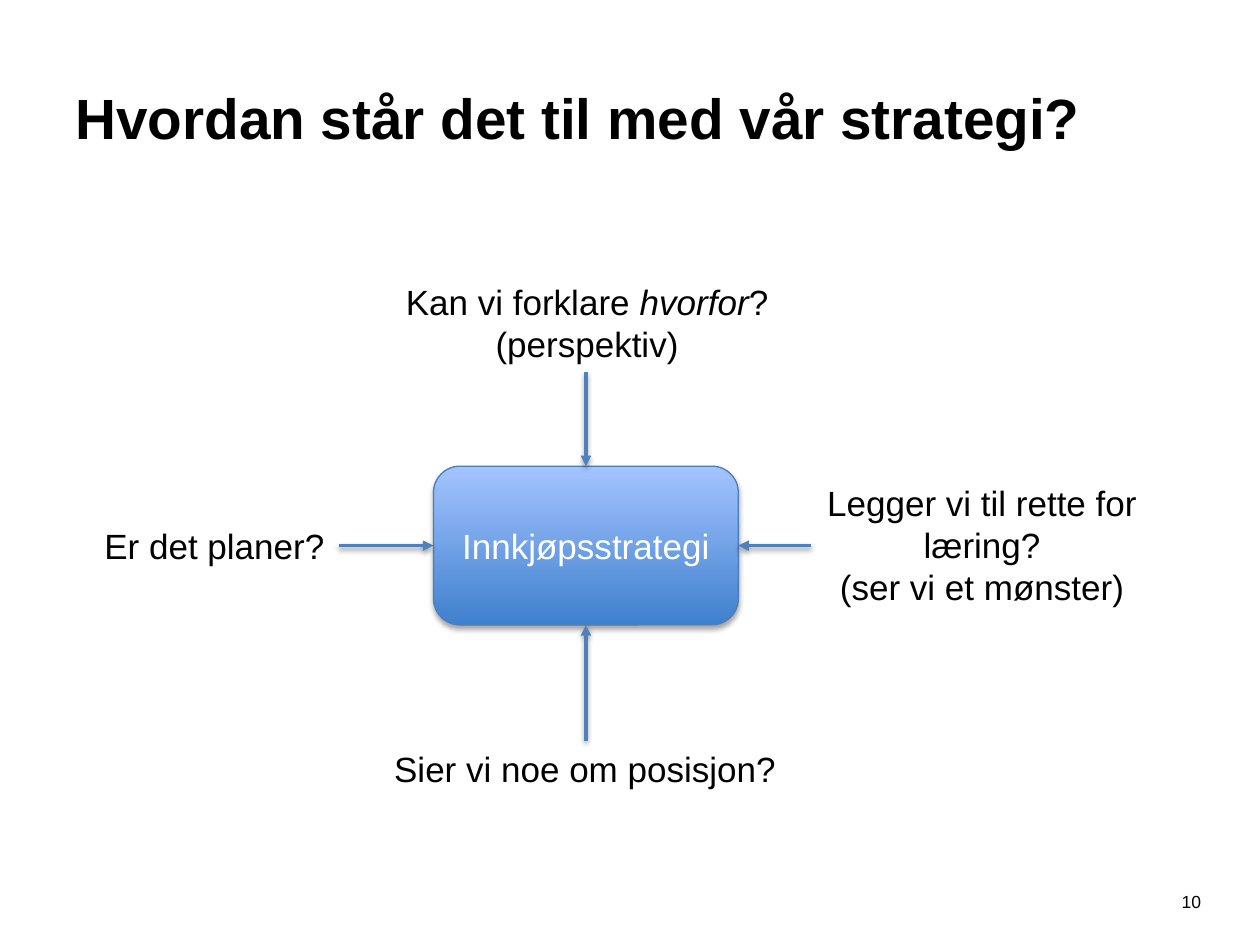
from dataclasses import dataclass

import pptx
import pptx.dml.color
import pptx.enum.shapes
import pptx.enum.text
import pptx.oxml
import pptx.oxml.ns
import pptx.util
from pptx.util import Inches

BLACK = pptx.dml.color.RGBColor(0x00, 0x00, 0x00)
WHITE = pptx.dml.color.RGBColor(0xFF, 0xFF, 0xFF)
BOX_BOTTOM = pptx.dml.color.RGBColor(0x3F, 0x80, 0xCE)
BOX_TOP = pptx.dml.color.RGBColor(0xA4, 0xC4, 0xFF)
BOX_LINE = pptx.dml.color.RGBColor(0x4B, 0x7E, 0xBC)
ARROW = pptx.dml.color.RGBColor(0x4F, 0x81, 0xBD)

LEFT = pptx.enum.text.PP_ALIGN.LEFT
CENTER = pptx.enum.text.PP_ALIGN.CENTER
TOP = pptx.enum.text.MSO_ANCHOR.TOP
MIDDLE = pptx.enum.text.MSO_ANCHOR.MIDDLE

BOX_LEFT, BOX_UPPER, BOX_WIDTH, BOX_HEIGHT = 3.44, 3.7, 2.42, 1.26
BOX_RIGHT = BOX_LEFT + BOX_WIDTH
BOX_LOWER = BOX_UPPER + BOX_HEIGHT
CENTER_X = BOX_LEFT + BOX_WIDTH / 2
CENTER_Y = BOX_UPPER + BOX_HEIGHT / 2


@dataclass
class Question:
    """A question and the arrow that leads from it to the strategy box."""
    lines: list[str]
    left: float
    top: float
    width: float
    height: float
    arrow_start: tuple[float, float]
    arrow_end: tuple[float, float]
    alignment: int = CENTER
    wrap: bool = False


QUESTIONS = [
    Question(["Er det planer?"], 0.73, 4.11, 1.96, 0.44,
             (2.69, CENTER_Y), (BOX_LEFT, CENTER_Y), alignment=LEFT),
    Question(["Sier vi noe om posisjon?"], 3.03, 5.88, 3.26, 0.44,
             (CENTER_X, 5.88), (CENTER_X, BOX_LOWER), alignment=LEFT),
    Question(["Legger vi til rette for læring?", "(ser vi et mønster)"],
             6.28, 3.77, 3.03, 1.11,
             (6.44, CENTER_Y), (BOX_RIGHT, CENTER_Y), wrap=True),
    Question(["Kan vi forklare *hvorfor*?", "(perspektiv)"], 3.11, 2.18, 3.1, 0.77,
             (CENTER_X, 2.95), (CENTER_X, BOX_UPPER)),
]


def write_text(shape, lines: list[str], *, size: float = 20, color=BLACK, bold: bool = False,
               alignment=CENTER, anchor=TOP, wrap: bool = True) -> None:
    """Fill a shape with one paragraph per line; *asterisks* mark italics."""
    frame = shape.text_frame
    frame.word_wrap = wrap
    frame.vertical_anchor = anchor
    for index, line in enumerate(lines):
        paragraph = frame.add_paragraph() if index else frame.paragraphs[0]
        paragraph.alignment = alignment
        for part_index, part in enumerate(line.split("*")):
            run = paragraph.add_run()
            run.text = part
            run.font.name = "Arial"
            run.font.size = pptx.util.Pt(size)
            run.font.bold = bold
            run.font.italic = part_index % 2 == 1
            run.font.color.rgb = color


def add_text(slide, lines: list[str], left: float, top: float, width: float, height: float,
             **text_format) -> None:
    shape = slide.shapes.add_textbox(Inches(left), Inches(top), Inches(width), Inches(height))
    write_text(shape, lines, **text_format)


def add_shadow(shape, distance: float, opacity: int) -> None:
    """Add a soft black shadow below; call after the line is set."""
    namespace = pptx.oxml.ns.nsdecls("a")
    shape._element.spPr.append(pptx.oxml.parse_xml(
        f'<a:effectLst {namespace}><a:outerShdw blurRad="{pptx.util.Pt(3.1)}" '
        f'dist="{pptx.util.Pt(distance)}" dir="5400000" rotWithShape="0">'
        f'<a:srgbClr val="000000"><a:alpha val="{opacity * 1000}"/></a:srgbClr>'
        '</a:outerShdw></a:effectLst>'))


def add_arrow(slide, start: tuple[float, float], end: tuple[float, float]) -> None:
    connector = slide.shapes.add_connector(
        pptx.enum.shapes.MSO_CONNECTOR.STRAIGHT, *map(Inches, start + end))
    connector.line.color.rgb = ARROW
    connector.line.width = pptx.util.Pt(2)
    connector.line._get_or_add_ln().append(pptx.oxml.parse_xml(
        f'<a:tailEnd {pptx.oxml.ns.nsdecls("a")} type="triangle"/>'))
    add_shadow(connector, distance=1.6, opacity=38)


def add_strategy_box(slide) -> None:
    box = slide.shapes.add_shape(
        pptx.enum.shapes.MSO_SHAPE.ROUNDED_RECTANGLE,
        Inches(BOX_LEFT), Inches(BOX_UPPER), Inches(BOX_WIDTH), Inches(BOX_HEIGHT))
    box.fill.gradient()
    box.fill.gradient_angle = 90
    for stop, color in zip(box.fill.gradient_stops, (BOX_BOTTOM, BOX_TOP)):
        stop.color.rgb = color
    box.line.color.rgb = BOX_LINE
    box.line.width = pptx.util.Pt(0.75)
    add_shadow(box, distance=1.8, opacity=35)
    write_text(box, ["Innkjøpsstrategi"], color=WHITE, anchor=MIDDLE)


def main() -> None:
    presentation = pptx.Presentation()
    presentation.slide_width = Inches(10)
    presentation.slide_height = Inches(7.5)
    slide = presentation.slides.add_slide(presentation.slide_layouts[6])

    add_text(slide, ["10"], 9.27, 7.02, 0.37, 0.4, size=10, wrap=False)
    add_text(slide, ["Hvordan står det til med vår strategi?"], 0.5, 0.3, 9, 1.25,
             size=32.4, bold=True, alignment=LEFT, anchor=MIDDLE)
    add_strategy_box(slide)
    for question in QUESTIONS:
        add_text(slide, question.lines, question.left, question.top, question.width,
                 question.height, alignment=question.alignment, wrap=question.wrap)
    for question in QUESTIONS:
        add_arrow(slide, question.arrow_start, question.arrow_end)

    presentation.save("out.pptx")


if __name__ == "__main__":
    main()
